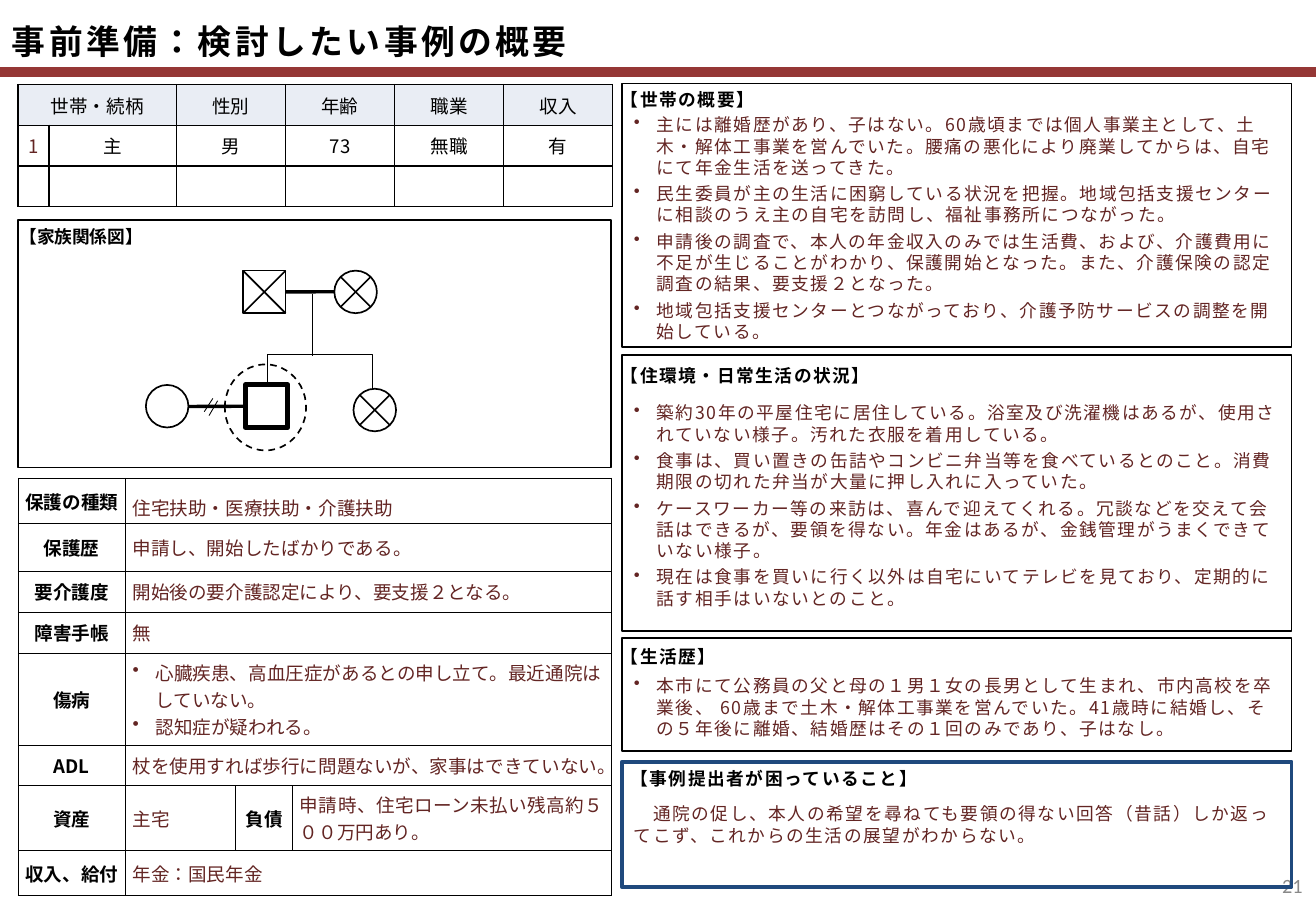
from typing import NamedTuple

from lxml import etree
from pptx import Presentation
from pptx import util as u
from pptx.dml.color import RGBColor
from pptx.enum import dml, shapes, text
from pptx.oxml import ns

JP_FONT = "Noto Sans CJK JP"
BLACK, MAROON = "000000", "632523"
LEFT, CENTER, JUSTIFY = text.PP_ALIGN.LEFT, text.PP_ALIGN.CENTER, text.PP_ALIGN.JUSTIFY
KIND = shapes.MSO_SHAPE


class Style(NamedTuple):
    size: float = 11
    color: str = BLACK
    bold: bool = False
    align: int = LEFT
    tracking: float = 0  # points between letters
    bullet: bool = False
    before: float = 0
    leading: float | None = None  # points if above 5, else a multiple
    font: str = JP_FONT


class Panel(NamedTuple):
    top: float
    height: float
    heading: str
    heading_left: float
    heading_top: float
    lines: list[str]
    color: str = BLACK
    weight: float = 1
    bullet: bool = True


class Symbol(NamedTuple):
    kind: int
    left: float
    top: float
    width: float = 0.89
    height: float = 0.89
    weight: float = 1
    dashed: bool = False


LABEL = Style(bold=True, align=CENTER)
VALUE = Style(color=MAROON, align=JUSTIFY)
HEADING = Style(10.5, bold=True, leading=12.6)
BODY = Style(10.5, MAROON, tracking=1, before=3, leading=12.6)

HOUSEHOLD = [["世帯・続柄", "", "性別", "年齢", "職業", "収入"],
             ["1", "主", "男", "73", "無職", "有"],
             [""] * 6]

SUPPORT = [
    (0.95, ["保護の種類", "住宅扶助・医療扶助・介護扶助"]),
    (0.99, ["保護歴", "申請し、開始したばかりである。"]),
    (0.86, ["要介護度", "開始後の要介護認定により、要支援２となる。"]),
    (0.86, ["障害手帳", "無"]),
    (1.93, ["傷病", "心臓疾患、高血圧症があるとの申し立て。最近通院はしていない。\n認知症が疑われる。"]),
    (0.84, ["ADL", "杖を使用すれば歩行に問題ないが、家事はできていない。"]),
    (1.35, ["資産", "主宅", "負債", "申請時、住宅ローン未払い残高約５００万円あり。"]),
    (0.95, ["収入、給付", "年金：国民年金"]),
]
SUPPORT_STYLES = {
    "保護の種類": VALUE._replace(leading=1.5),
    "傷病": VALUE._replace(align=LEFT, bullet=True),
    "ADL": VALUE._replace(align=LEFT),
}

PANELS = [
    Panel(1.75, 5.51, "【世帯の概要】", 12.98, 1.85, [
        "主には離婚歴があり、子はない。60歳頃までは個人事業主として、土木・解体工事業を営んでいた。腰痛の悪化により廃業してからは、自宅にて年金生活を送ってきた。",
        "民生委員が主の生活に困窮している状況を把握。地域包括支援センターに相談のうえ主の自宅を訪問し、福祉事務所につながった。",
        "申請後の調査で、本人の年金収入のみでは生活費、および、介護費用に不足が生じることがわかり、保護開始となった。また、介護保険の認定調査の結果、要支援２となった。",
        "地域包括支援センターとつながっており、介護予防サービスの調整を開始している。"]),
    Panel(7.42, 5.77, "【住環境・日常生活の状況】", 12.98, 7.62, [
        "築約30年の平屋住宅に居住している。浴室及び洗濯機はあるが、使用されていない様子。汚れた衣服を着用している。",
        "食事は、買い置きの缶詰やコンビニ弁当等を食べているとのこと。消費期限の切れた弁当が大量に押し入れに入っていた。",
        "ケースワーカー等の来訪は、喜んで迎えてくれる。冗談などを交えて会話はできるが、要領を得ない。年金はあるが、金銭管理がうまくできていない様子。",
        "現在は食事を買いに行く以外は自宅にいてテレビを見ており、定期的に話す相手はいないとのこと。"]),
    Panel(13.34, 2.36, "【生活歴】", 12.98, 13.51, [
        "本市にて公務員の父と母の１男１女の長男として生まれ、市内高校を卒業後、 60歳まで土木・解体工事業を営んでいた。41歳時に結婚し、その５年後に離婚、結婚歴はその１回のみであり、子はなし。"]),
    Panel(15.93, 2.62, "【事例提出者が困っていること】", 13.18, 16.05, [
        "　通院の促し、本人の希望を尋ねても要領の得ない回答（昔話）しか返ってこず、これからの生活の展望がわからない。"],
        "1F497D", 2.25, False),
]


def rgb(value: str) -> RGBColor:
    return RGBColor.from_string(value)


def write(frame, content: str, style: Style) -> None:
    frame.text = content
    for paragraph in frame.paragraphs:
        paragraph.alignment = style.align
        paragraph.space_before = u.Pt(style.before)
        if style.leading:
            paragraph.line_spacing = u.Pt(style.leading) if style.leading > 5 else style.leading
        if style.bullet:
            props = paragraph._p.get_or_add_pPr()
            props.set("marL", str(u.Cm(0.48)))
            props.set("indent", str(-u.Cm(0.48)))
            etree.SubElement(props, ns.qn("a:buChar"), char="•")
        for run in paragraph.runs:
            font = run.font
            font.size, font.bold, font.name = u.Pt(style.size), style.bold, style.font
            font.color.rgb = rgb(style.color)
            props = run._r.get_or_add_rPr()
            props.set("lang", "ja-JP")
            props.set("spc", str(round(style.tracking * 100)))
            etree.SubElement(props, ns.qn("a:ea"), typeface=style.font)


def set_margins(target, left: float, top: float, right: float, bottom: float) -> None:
    target.margin_left, target.margin_top = u.Cm(left), u.Cm(top)
    target.margin_right, target.margin_bottom = u.Cm(right), u.Cm(bottom)


def add_label(slide, box: tuple, content: str, style: Style, margins=(0, 0, 0, 0),
              wrap: bool = False, anchor=text.MSO_ANCHOR.TOP) -> None:
    frame = slide.shapes.add_textbox(*map(u.Cm, box)).text_frame
    frame.word_wrap, frame.vertical_anchor = wrap, anchor
    set_margins(frame, *margins)
    write(frame, content, style)


def add_outline(slide, symbol: Symbol, color: str = BLACK):
    shape = slide.shapes.add_shape(symbol.kind, *map(u.Cm, symbol[1:5]))
    shape.shadow.inherit = False
    shape.fill.background()
    shape.line.color.rgb, shape.line.width = rgb(color), u.Pt(symbol.weight)
    if symbol.dashed:
        shape.line.dash_style = dml.MSO_LINE.DASH
    return shape


def add_line(slide, ends: tuple, weight: float, color: str = BLACK,
             kind=shapes.MSO_CONNECTOR.STRAIGHT):
    line = slide.shapes.add_connector(kind, *map(u.Cm, ends))
    line.line.color.rgb, line.line.width = rgb(color), u.Pt(weight)
    etree.SubElement(line._element.spPr, ns.qn("a:effectLst"))
    return line


def add_grid(slide, left: float, top: float, widths: list[float], heights: list[float]):
    frame = slide.shapes.add_table(len(heights), len(widths), u.Cm(left), u.Cm(top),
                                   u.Cm(sum(widths)), u.Cm(sum(heights)))
    table = frame.table
    table.first_row = table.horz_banding = False
    for column, width in zip(table.columns, widths):
        column.width = u.Cm(width)
    for row, height in zip(table.rows, heights):
        row.height = u.Cm(height)
    return table


def finish_cell(cell, margin: float, border: float, fill: str | None = None) -> None:
    set_margins(cell, margin, 0, margin, 0)
    cell.vertical_anchor = text.MSO_ANCHOR.MIDDLE
    props = cell._tc.get_or_add_tcPr()
    for side in ("a:lnL", "a:lnR", "a:lnT", "a:lnB"):
        edge = etree.SubElement(props, ns.qn(side), w=str(u.Pt(border)))
        solid = etree.SubElement(edge, ns.qn("a:solidFill"))
        etree.SubElement(solid, ns.qn("a:srgbClr"), val=BLACK)
    if fill:
        cell.fill.solid()
        cell.fill.fore_color.rgb = rgb(fill)
    else:
        cell.fill.background()


def add_household(slide) -> None:
    table = add_grid(slide, 0.38, 1.77, [0.64, 2.67] + [2.28] * 4, [0.85] * 3)
    table.cell(0, 0).merge(table.cell(0, 1))
    for r, row in enumerate(HOUSEHOLD):
        for c, content in enumerate(row):
            cell = table.cell(r, c)
            color = MAROON if (r, c) == (1, 0) else BLACK
            write(cell.text_frame, content, Style(color=color, align=CENTER))
            finish_cell(cell, 0.18, 1, None if r else "E9EDF4")


def add_support(slide) -> None:
    table = add_grid(slide, 0.38, 10, [2.24, 2.31, 1.19, 6.65], [height for height, _ in SUPPORT])
    for r, (_, row) in enumerate(SUPPORT):
        if len(row) == 2:
            table.cell(r, 1).merge(table.cell(r, 3))
        for c, content in enumerate(row):
            style = SUPPORT_STYLES.get(row[0], VALUE) if c % 2 else LABEL
            write(table.cell(r, c).text_frame, content, style)
        for c in range(4):
            finish_cell(table.cell(r, c), 0.15 if c else 0.05, 0.5)


def add_family(slide) -> None:
    add_outline(slide, Symbol(KIND.RECTANGLE, 0.38, 4.6, 12.4, 5.18))
    add_label(slide, (0.41, 4.72, 2.62, 0.46), "【家族関係図】", HEADING)
    add_outline(slide, Symbol(KIND.OVAL, 4.7, 7.62, 1.7, 1.8, dashed=True))
    client = add_outline(slide, Symbol(KIND.RECTANGLE, 5.13, 8.05, weight=3))
    father = add_outline(slide, Symbol(KIND.RECTANGLE, 5.08, 5.66))
    former_wife = Symbol(KIND.OVAL, 3.05, 8.05)
    mother = Symbol(KIND.FLOWCHART_SUMMING_JUNCTION, 6.99, 5.66)
    sister = Symbol(KIND.FLOWCHART_SUMMING_JUNCTION, 7.39, 8.13)
    for person in (former_wife, mother, sister):
        add_outline(slide, person)
    for ends in ((5.08, 5.66, 5.97, 6.55), (5.08, 6.55, 5.97, 5.66)):
        add_line(slide, ends, 1)
    for ends in ((6.53, 6.15, 6.53, 7.44), (4.45, 8.33, 4.27, 8.61), (4.55, 8.38, 4.37, 8.69)):
        add_line(slide, ends, 0.5)
    add_line(slide, (5.97, 6.1, 6.99, 6.1), 2).begin_connect(father, 3)
    add_line(slide, (3.94, 8.5, 5.13, 8.5), 2).end_connect(client, 1)

    siblings = add_line(slide, (6.65, 7.01, 6.73, 9.19), 0.5, kind=shapes.MSO_CONNECTOR.ELBOW)
    props = siblings._element.spPr
    turn = props.find(ns.qn("a:xfrm"))
    turn.set("rot", "16200000")
    turn.set("flipH", "1")
    adjust = props.find(ns.qn("a:prstGeom")).find(ns.qn("a:avLst"))
    etree.SubElement(adjust, ns.qn("a:gd"), name="adj1", fmla="val -800000")


def add_panel(slide, panel: Panel) -> None:
    box = Symbol(KIND.RECTANGLE, 13, panel.top, 14, panel.height, panel.weight)
    frame = add_outline(slide, box, panel.color).text_frame
    frame.word_wrap, frame.vertical_anchor = True, text.MSO_ANCHOR.MIDDLE
    set_margins(frame, 0.25, 0.53 if panel.bullet else 0, 0.25, 0)
    write(frame, "\n".join(panel.lines), BODY._replace(bullet=panel.bullet))
    add_label(slide, (panel.heading_left, panel.heading_top, 6, 0.46), panel.heading,
              HEADING._replace(tracking=1))


def main() -> None:
    deck = Presentation()
    deck.slide_width, deck.slide_height = u.Cm(27.51), u.Cm(19.05)
    slide = deck.slides.add_slide(deck.slide_layouts[6])
    add_line(slide, (0, 1.5, 27.51, 1.5), 6, "953735")
    add_label(slide, (26.34, 18.01, 1.14, 1.02), "21",
              Style(12, "898989", align=text.PP_ALIGN.RIGHT, font="Calibri"),
              (0.25, 0.13, 0.25, 0.13), True, text.MSO_ANCHOR.MIDDLE)
    add_label(slide, (0, 0, 26.77, 1.5), "事前準備：検討したい事例の概要",
              Style(20, bold=True, tracking=2), (0.25, 0.2, 0.25, 0), True, text.MSO_ANCHOR.MIDDLE)
    add_household(slide)
    add_support(slide)
    add_family(slide)
    for panel in PANELS:
        add_panel(slide, panel)
    deck.save("out.pptx")


if __name__ == "__main__":
    main()
